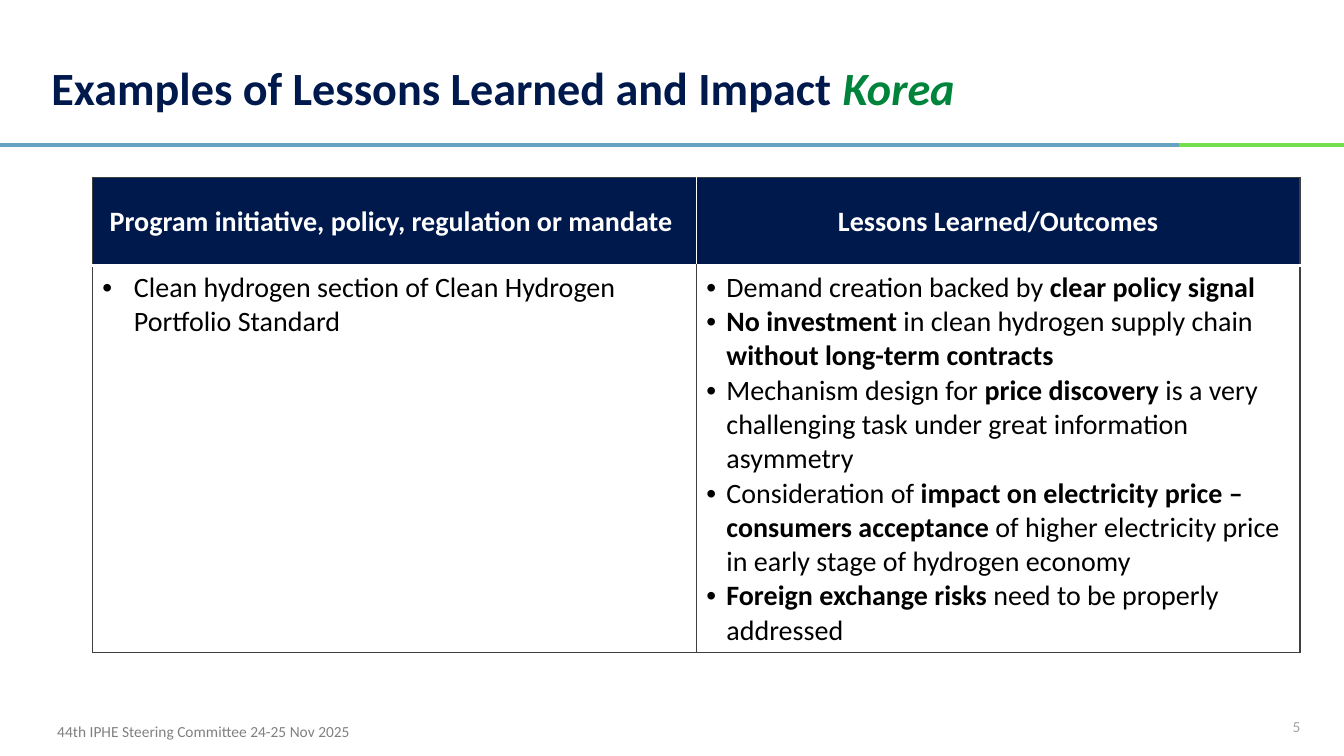
from lxml.etree import SubElement
from pptx import Presentation
from pptx.dml.color import RGBColor
from pptx.enum.shapes import MSO_CONNECTOR
from pptx.enum.text import MSO_ANCHOR, MSO_AUTO_SIZE, PP_ALIGN
from pptx.oxml.ns import qn
from pptx.util import Pt

NAVY, GREEN, WHITE, BLACK, EDGE = "00194C", "00843B", "FFFFFF", "000000", "3F3F3F"

HEADERS = ["Program initiative, policy, regulation or mandate ", "Lessons Learned/Outcomes"]
# Double asterisks mark bold passages.
INITIATIVES = ["Clean hydrogen section of Clean Hydrogen Portfolio Standard"]
LESSONS = [
    "Demand creation backed by **clear policy signal**",
    "**No investment **in clean hydrogen supply chain **without long-term contracts**",
    "Mechanism design for **price discovery **is a very challenging task under great "
    "information asymmetry",
    "Consideration of **impact on electricity price – consumers acceptance** of higher "
    "electricity price in early stage of hydrogen economy",
    "**Foreign exchange risks **need to be properly addressed",
]


def color(value):
    return RGBColor.from_string(value)


class SlideBuilder:
    def __init__(self, page, font_name):
        self.page = page
        self.font_name = font_name

    def style(self, para, size, ink, bold=False, align=PP_ALIGN.LEFT):
        para.alignment = align
        font = para.font
        font.name, font.size, font.bold = self.font_name, Pt(size), bold
        font.color.rgb = color(ink)

    def title(self, text, accent, left, top, width, height):
        box = self.page.shapes.title
        box.left, box.top, box.width, box.height = map(Pt, (left, top, width, height))
        frame = box.text_frame
        frame.auto_size = MSO_AUTO_SIZE.NONE
        frame.vertical_anchor = MSO_ANCHOR.MIDDLE
        frame.margin_bottom = 0
        para = frame.paragraphs[0]
        para.line_spacing = 0.9
        self.style(para, 33, NAVY, bold=True)
        para.add_run().text = text
        span = para.add_run()
        span.text = accent
        span.font.italic = True
        span.font.color.rgb = color(GREEN)

    def label(self, text, left, top, width, height, ink, align=PP_ALIGN.LEFT):
        box = self.page.shapes.add_textbox(*map(Pt, (left, top, width, height)))
        frame = box.text_frame
        frame.word_wrap = True
        frame.vertical_anchor = MSO_ANCHOR.BOTTOM
        para = frame.paragraphs[0]
        para.text = text
        self.style(para, 11, ink, align=align)

    def rule(self, start, end, top, ink):
        line = self.page.shapes.add_connector(
            MSO_CONNECTOR.STRAIGHT, Pt(start), Pt(top), Pt(end), Pt(top))
        line.line.color.rgb = color(ink)
        line.line.width = Pt(2.5)
        SubElement(line._element.spPr, qn("a:effectLst"))

    def table(self, left, top, column_width, row_heights):
        frame = self.page.shapes.add_table(
            len(row_heights), 2, Pt(left), Pt(top), Pt(2 * column_width), Pt(sum(row_heights)))
        grid = frame.table
        grid.horz_banding = False
        for column in grid.columns:
            column.width = Pt(column_width)
        for row, height in zip(grid.rows, row_heights):
            row.height = Pt(height)
        return grid

    def borders(self, cell, **edges):
        """Draw cell edges, each given as (colour, width), in the order L, R, T, B."""
        properties = cell._tc.get_or_add_tcPr()
        for side in "LRTB":
            ink, width = edges[side]
            line = SubElement(properties, qn(f"a:ln{side}"), w=str(Pt(width)))
            fill = SubElement(line, qn("a:solidFill"))
            SubElement(fill, qn("a:srgbClr"), val=ink)

    def header_cell(self, cell, text):
        cell.fill.solid()
        cell.fill.fore_color.rgb = color(NAVY)
        cell.vertical_anchor = MSO_ANCHOR.MIDDLE
        para = cell.text_frame.paragraphs[0]
        para.text = text
        self.style(para, 20, WHITE, bold=True, align=PP_ALIGN.CENTER)

    def bullet_cell(self, cell, items, indent):
        cell.fill.background()
        frame = cell.text_frame
        for index, item in enumerate(items):
            para = frame.add_paragraph() if index else frame.paragraphs[0]
            properties = para._p.get_or_add_pPr()
            properties.set("marL", str(Pt(indent)))
            properties.set("indent", str(-Pt(indent)))
            SubElement(properties, qn("a:buFont"), typeface="Arial")
            SubElement(properties, qn("a:buChar"), char="•")
            self.style(para, 20, BLACK)
            for position, part in enumerate(item.split("**")):
                if part:
                    span = para.add_run()
                    span.text = part
                    span.font.bold = position % 2 == 1


def main():
    deck = Presentation()
    deck.slide_width, deck.slide_height = Pt(960), Pt(540)
    page = deck.slides.add_slide(deck.slide_layouts[5])
    builder = SlideBuilder(page, "Calibri")

    builder.rule(842.4, 960, 103.5, "73DF4D")
    builder.rule(0, 842.4, 103.5, "66A3C2")
    builder.title("Examples of Lessons Learned and Impact ", "Korea", 29.5, 20, 806, 85)

    grid = builder.table(66, 126.7, 431.3, [63, 272])
    dark, light, divider = (EDGE, 1), (WHITE, 1), (WHITE, 3)
    bodies = [(INITIATIVES, 22.5), (LESSONS, 14.4)]
    for column, (header, (items, indent)) in enumerate(zip(HEADERS, bodies)):
        top_cell, body_cell = grid.cell(0, column), grid.cell(1, column)
        builder.borders(top_cell, L=light if column else dark,
                        R=dark if column else light, T=dark, B=divider)
        builder.borders(body_cell, L=dark, R=dark, T=divider, B=dark)
        builder.header_cell(top_cell, header)
        builder.bullet_cell(body_cell, items, indent)

    builder.label("5", 877.7, 500.4, 58.3, 28.8, "A5A5A5", PP_ALIGN.RIGHT)
    builder.label("44th IPHE Steering Committee 24-25 Nov 2025", 33.8, 503.5, 255.6, 28.8, "808080")
    deck.save("out.pptx")


if __name__ == "__main__":
    main()
